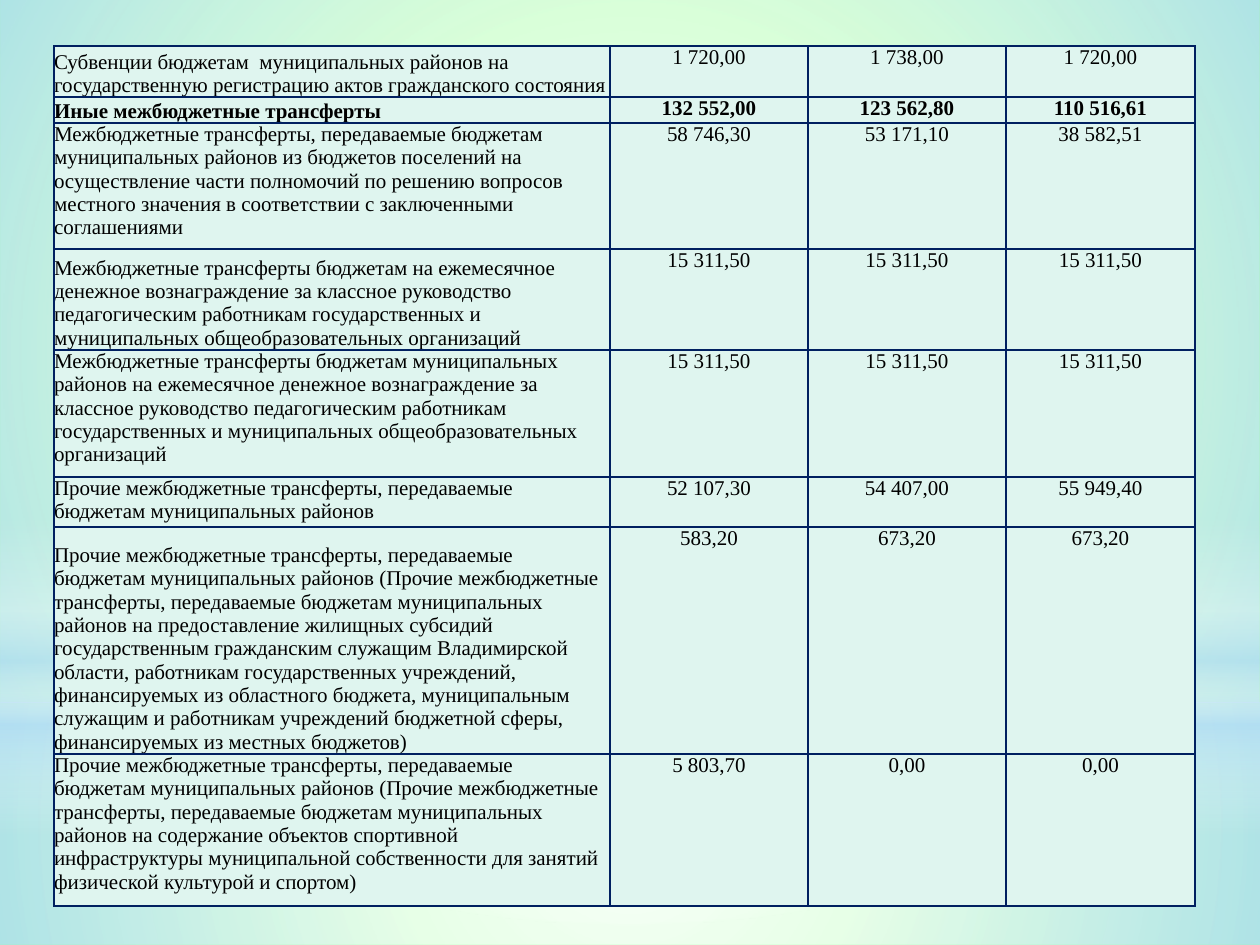
from pptx import Presentation
from pptx.dml.color import RGBColor
from pptx.enum.shapes import MSO_SHAPE
from pptx.enum.text import MSO_ANCHOR, PP_ALIGN
from pptx.oxml import parse_xml
from pptx.oxml.ns import nsdecls, qn
from pptx.util import Pt

RECT, OVAL = MSO_SHAPE.RECTANGLE, MSO_SHAPE.OVAL
TOP, BOTTOM = MSO_ANCHOR.TOP, MSO_ANCHOR.BOTTOM
LEFT, CENTER = PP_ALIGN.LEFT, PP_ALIGN.CENTER

PX = 914400 // 126
FONT, SIZE = "Times New Roman", Pt(12)
COLORS = {"page": "99FF99", "white": "FFFFFF", "sky": "B4DCFA",
          "cell": "DFF5EF", "border": "002060", "text": "000000"}

# Table rows: height in px, anchor of the name, name, values
ROWS = [
    (51, BOTTOM, "Субвенции бюджетам  муниципальных районов на государственную "
     "регистрацию актов гражданского состояния",
     ("1 720,00", "1 738,00", "1 720,00")),
    (26, BOTTOM, "Иные межбюджетные трансферты",
     ("132 552,00", "123 562,80", "110 516,61")),
    (126, TOP, "Межбюджетные трансферты, передаваемые бюджетам муниципальных "
     "районов из бюджетов поселений на осуществление части полномочий по решению "
     "вопросов местного значения в соответствии с заключенными соглашениями",
     ("58 746,30", "53 171,10", "38 582,51")),
    (101, BOTTOM, "Межбюджетные трансферты бюджетам на ежемесячное денежное "
     "вознаграждение за классное руководство педагогическим работникам "
     "государственных и муниципальных общеобразовательных организаций",
     ("15 311,50", "15 311,50", "15 311,50")),
    (127, TOP, "Межбюджетные трансферты бюджетам муниципальных районов на "
     "ежемесячное денежное вознаграждение за классное руководство педагогическим "
     "работникам государственных и муниципальных общеобразовательных организаций",
     ("15 311,50", "15 311,50", "15 311,50")),
    (50, TOP, "Прочие межбюджетные трансферты, передаваемые бюджетам "
     "муниципальных районов",
     ("52 107,30", "54 407,00", "55 949,40")),
    (227, BOTTOM, "Прочие межбюджетные трансферты, передаваемые бюджетам "
     "муниципальных районов (Прочие межбюджетные трансферты, передаваемые "
     "бюджетам муниципальных районов на предоставление жилищных субсидий "
     "государственным гражданским служащим Владимирской области, работникам "
     "государственных учреждений, финансируемых из областного бюджета, "
     "муниципальным служащим и работникам учреждений бюджетной сферы, "
     "финансируемых из местных бюджетов)",
     ("583,20", "673,20", "673,20")),
    (152, TOP, "Прочие межбюджетные трансферты, передаваемые бюджетам "
     "муниципальных районов (Прочие межбюджетные трансферты, передаваемые "
     "бюджетам муниципальных районов на содержание объектов спортивной "
     "инфраструктуры муниципальной собственности для занятий физической "
     "культурой и спортом)",
     ("5 803,70", "0,00", "0,00")),
]
TOTAL_ROW = 1
COLS = [556, 198, 198, 189]
TABLE_LEFT, TABLE_TOP = 54, 46

# Backdrop: shape, top, height, radial, stops (position %, colour, opacity %)
BACKDROP = [
    (RECT, 703, 242, True,
     [(0, "white", 91), (37, "white", 76), (100, "sky", 79)]),
    (RECT, 0, 703, True,
     [(0, "white", 89), (48, "white", 62), (100, "sky", 79)]),
    (RECT, 519, 315, False,
     [(0, "white", 0), (29, "white", 30), (45, "sky", 40),
      (55, "white", 26), (65, "sky", 60), (100, "white", 0)]),
    (OVAL, 221, 703, True, [(0, "white", 100), (56, "white", 0)]),
]


def rgb(name):
    return RGBColor.from_string(COLORS[name])


def set_gradient(sp, radial, stops):
    sp.fill.background()
    gs = "".join(
        f'<a:gs pos="{pos * 1000}"><a:srgbClr val="{COLORS[color]}">'
        f'<a:alpha val="{alpha * 1000}"/></a:srgbClr></a:gs>'
        for pos, color, alpha in stops)
    if radial:
        shade = ('<a:path path="circle"><a:fillToRect l="50000" t="50000" '
                 'r="50000" b="50000"/></a:path>')
    else:
        shade = '<a:lin ang="5400000" scaled="0"/>'
    spPr = sp._element.spPr
    spPr.replace(spPr.find(qn("a:noFill")), parse_xml(
        f'<a:gradFill {nsdecls("a")} rotWithShape="1"><a:gsLst>{gs}</a:gsLst>'
        f'{shade}</a:gradFill>'))


def set_borders(cell):
    tcPr = cell._tc.get_or_add_tcPr()
    for i, side in enumerate(("lnL", "lnR", "lnT", "lnB")):
        tcPr.insert(i, parse_xml(
            f'<a:{side} {nsdecls("a")} w="12700"><a:solidFill>'
            f'<a:srgbClr val="{COLORS["border"]}"/></a:solidFill></a:{side}>'))


def fill_cell(cell, text, align, anchor, bold):
    cell.margin_left = cell.margin_right = 0
    cell.margin_top = cell.margin_bottom = 0
    cell.vertical_anchor = anchor
    cell.fill.solid()
    cell.fill.fore_color.rgb = rgb("cell")
    set_borders(cell)
    p = cell.text_frame.paragraphs[0]
    p.text = text
    p.alignment = align
    font = p.runs[0].font
    font.name, font.size, font.bold = FONT, SIZE, bold
    font.color.rgb = rgb("text")


prs = Presentation()
prs.slide_width, prs.slide_height = 1260 * PX, 945 * PX
s = prs.slides.add_slide(prs.slide_layouts[6])

# Background
s.background.fill.solid()
s.background.fill.fore_color.rgb = rgb("page")
for kind, top, height, radial, stops in BACKDROP:
    sp = s.shapes.add_shape(kind, 0, top * PX, prs.slide_width, height * PX)
    sp.shadow.inherit = False
    sp.line.fill.background()
    set_gradient(sp, radial, stops)

# Table
table = s.shapes.add_table(
    len(ROWS), len(COLS), TABLE_LEFT * PX, TABLE_TOP * PX,
    sum(COLS) * PX, sum(row[0] for row in ROWS) * PX).table
table.first_row = table.horz_banding = False
for col, width in zip(table.columns, COLS):
    col.width = width * PX
for i, (height, anchor, name, values) in enumerate(ROWS):
    table.rows[i].height = height * PX
    bold = i == TOTAL_ROW
    fill_cell(table.cell(i, 0), name, LEFT, anchor, bold)
    for j, value in enumerate(values, 1):
        fill_cell(table.cell(i, j), value, CENTER, TOP, bold)

prs.save("out.pptx")
